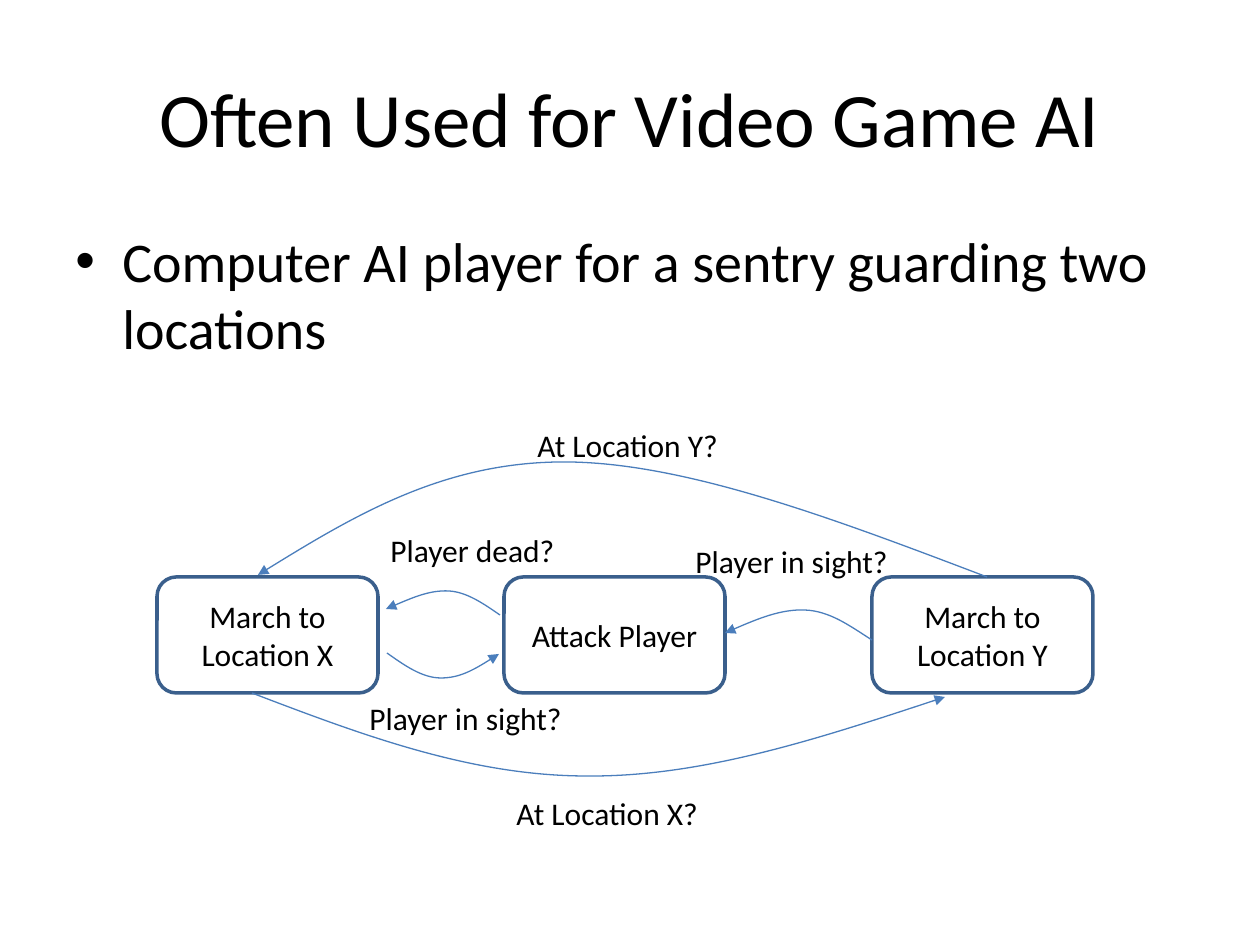
"""Build a slide showing a sentry's state machine for video game AI."""
from lxml import etree
from pptx import Presentation
from pptx import util as u
from pptx.dml.color import RGBColor
from pptx.enum import shapes, text
from pptx.oxml.ns import qn

PX = 914400 / 126
COLORS = {"text": "000000", "box": "3A5F8C", "arrow": "4B7EBC"}


def px(*lengths):
    return [u.Emu(round(n * PX)) for n in lengths]


def write(sp, words, size, align, anchor, wrap=True):
    tf = sp.text_frame
    tf.word_wrap = wrap
    tf.vertical_anchor = anchor
    p = tf.paragraphs[0]
    p.alignment = align
    r = p.add_run()
    r.text = words
    r.font.size = u.Pt(size)
    r.font.name = "Calibri"
    r.font.color.rgb = RGBColor.from_string(COLORS["text"])
    return p


LEFT, CENTER = text.PP_ALIGN.LEFT, text.PP_ALIGN.CENTER
TOP, MIDDLE = text.MSO_ANCHOR.TOP, text.MSO_ANCHOR.MIDDLE

prs = Presentation()
prs.slide_width, prs.slide_height = px(1260, 945)
s = prs.slides.add_slide(prs.slide_layouts[6])

title = s.shapes.add_textbox(*px(63, 38, 1134, 158))
write(title, "Often Used for Video Game AI", 44, CENTER, MIDDLE)

body = s.shapes.add_textbox(*px(63, 220, 1134, 158))
p = write(body, "Computer AI player for a sentry guarding two locations", 32, LEFT, TOP)
p.space_before = u.Pt(6.4)
pPr = p._p.get_or_add_pPr()
indent = px(47)[0]
pPr.set("marL", str(indent))
pPr.set("indent", str(-indent))
etree.SubElement(pPr, qn("a:buFont")).set("typeface", "Arial")
etree.SubElement(pPr, qn("a:buChar")).set("char", "•")

states = [(157, "March to Location X"), (504, "Attack Player"), (872, "March to Location Y")]
for x, words in states:
    sp = s.shapes.add_shape(shapes.MSO_SHAPE.ROUNDED_RECTANGLE, *px(x, 577, 221, 116))
    sp.shadow.inherit = False
    sp.fill.background()
    sp.line.color.rgb = RGBColor.from_string(COLORS["box"])
    sp.line.width = u.Pt(2)
    write(sp, words, 18, CENTER, MIDDLE)

arrows = [
    [(987, 577), (837, 520), (685, 462), (564, 462), (444, 462), (350, 518), (258, 575)],
    [(500, 615), (484, 604), (467, 592), (449, 591), (430, 590), (407, 600), (386, 609)],
    [(387, 653), (404, 665), (422, 678), (441, 678), (460, 678), (479, 667), (499, 654)],
    [(872, 640), (850, 626), (830, 611), (805, 610), (781, 609), (752, 621), (725, 633)],
    [(252, 693), (362, 735), (471, 776), (587, 776), (702, 777), (824, 737), (945, 697)],
]
for points in arrows:
    knots = points[::3]
    builder = s.shapes.build_freeform(*knots[0], scale=PX)
    builder.add_line_segments(knots[1:], close=False)
    sp = builder.convert_to_shape()
    left, top = (min(axis) for axis in zip(*knots))
    for i, segment in enumerate(list(sp._element.iter(qn("a:lnTo")))):
        segment.tag = qn("a:cubicBezTo")
        for j, (x, y) in enumerate(points[3 * i + 1:3 * i + 3]):
            control = etree.Element(qn("a:pt"), x=str(x - left), y=str(y - top))
            segment.insert(j, control)
    sp.shadow.inherit = False
    sp.fill.background()
    sp.line.color.rgb = RGBColor.from_string(COLORS["arrow"])
    sp.line.width = u.Pt(0.75)
    etree.SubElement(sp.line._get_or_add_ln(), qn("a:tailEnd")).set("type", "triangle")

labels = [
    (525, 420, 208, "At Location Y?"),
    (504, 788, 208, "At Location X?"),
    (378, 525, 194, "Player dead?"),
    (357, 693, 220, "Player in sight?"),
    (683, 536, 220, "Player in sight?"),
]
for x, y, width, words in labels:
    sp = s.shapes.add_textbox(*px(x, y, width, 50))
    write(sp, words, 18, LEFT, TOP, wrap=False)
    sp.text_frame.auto_size = text.MSO_AUTO_SIZE.SHAPE_TO_FIT_TEXT

prs.save("out.pptx")
